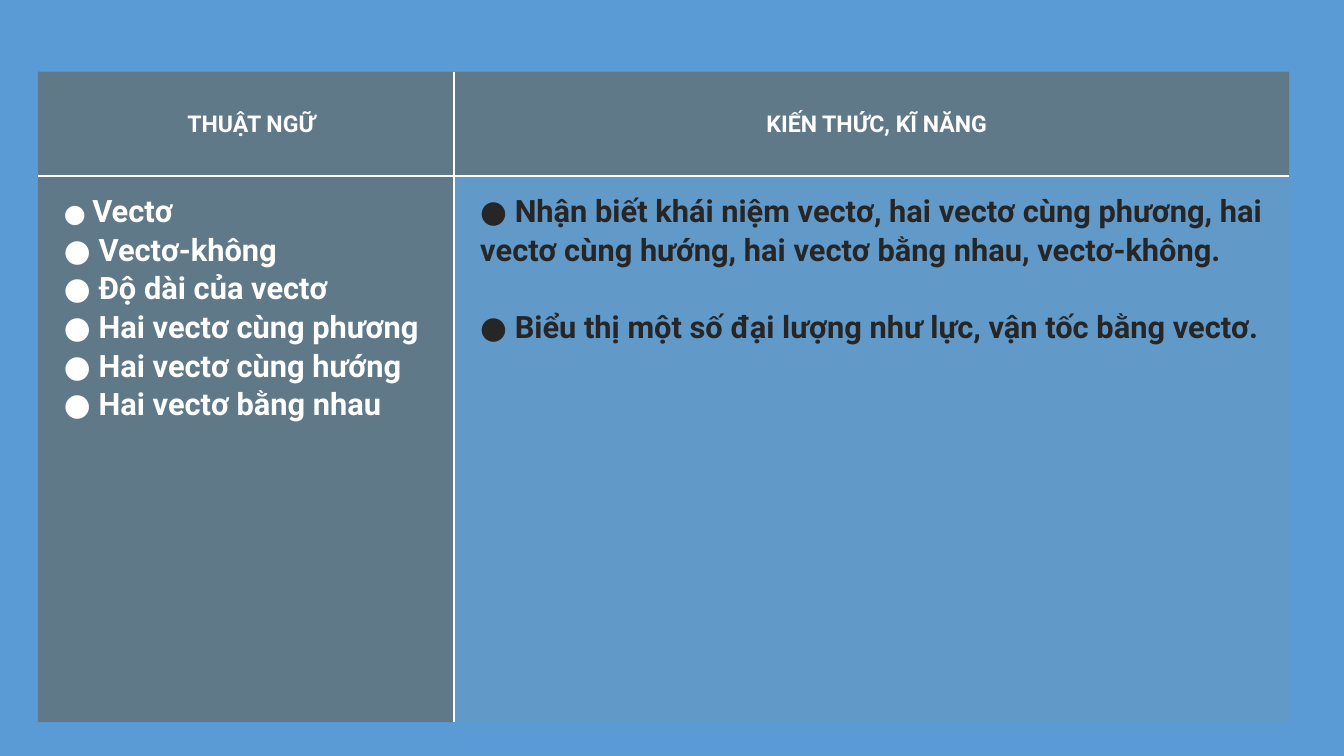
from dataclasses import dataclass

from lxml.etree import SubElement
from pptx import Presentation
from pptx.dml.color import RGBColor
from pptx.enum.text import MSO_ANCHOR, PP_ALIGN
from pptx.oxml.ns import qn
from pptx.table import _Cell
from pptx.util import Inches, Pt

WHITE, DARK, SLATE, MIST, BLUE = "FFFFFF", "262626", "636B68", "878E8B", "5B9BD5"
COLS = (8.26, 16.57)
ROWS = (2.07, 10.84)


@dataclass
class Box:
    lines: list[str]
    fill: str = SLATE
    alpha: int = 70
    color: str = WHITE
    head: bool = False
    gap: int = 0


GRID = [
    [Box(["THUẬT NGỮ"], head=True), Box(["KIẾN THỨC, KĨ NĂNG"], head=True)],
    [
        Box(["● Vectơ", "● Vectơ-không", "● Độ dài của vectơ",
             "● Hai vectơ cùng phương", "● Hai vectơ cùng hướng",
             "● Hai vectơ bằng nhau"]),
        Box(["● Nhận biết khái niệm vectơ, hai vectơ cùng phương, hai vectơ "
             "cùng hướng, hai vectơ bằng nhau, vectơ-không.",
             "● Biểu thị một số đại lượng như lực, vận tốc bằng vectơ."],
            MIST, 15, DARK, gap=55),
    ],
]


def rgb(color: str) -> RGBColor:
    return RGBColor.from_string(color)


def set_edges(cell: _Cell, inner: str) -> None:
    """Rule the inner sides (letters of LRTB) in white and clear the others."""
    props = cell._tc.get_or_add_tcPr()
    for side in "LRTB":
        line = SubElement(props, qn(f"a:ln{side}"), w=str(Pt(3)))
        if side in inner:
            fill = SubElement(line, qn("a:solidFill"))
            SubElement(fill, qn("a:srgbClr"), val=WHITE)
        else:
            SubElement(line, qn("a:noFill"))


def set_fill(cell: _Cell, color: str, alpha: int) -> None:
    cell.fill.solid()
    cell.fill.fore_color.rgb = rgb(color)
    tint = cell._tc.tcPr.find(qn("a:solidFill"))[0]
    SubElement(tint, qn("a:alpha"), val=str(alpha * 1000))


def write(cell: _Cell, box: Box) -> None:
    cell.margin_left = Inches(0.52)
    cell.margin_right = cell.margin_top = cell.margin_bottom = Inches(0.31)
    cell.vertical_anchor = MSO_ANCHOR.MIDDLE if box.head else MSO_ANCHOR.TOP
    frame = cell.text_frame
    for i, line in enumerate(box.lines):
        para = frame.add_paragraph() if i else frame.paragraphs[0]
        para.alignment = PP_ALIGN.CENTER if box.head else PP_ALIGN.LEFT
        para.line_spacing = 1.07
        if i:
            para.space_before = Pt(box.gap)
        para.add_run().text = line
        font = para.font
        font.name, font.bold = "Roboto", True
        font.size = Pt(33 if box.head else 44)
        font.color.rgb = rgb(box.color)


def shrink_dot(cell: _Cell, size: int) -> None:
    """Give the dot of the first line a run of its own in a smaller size."""
    para = cell.text_frame.paragraphs[0]
    dot = para.runs[0]
    rest = dot.text[2:]
    dot.text = dot.text[:2]
    dot.font.size = Pt(size)
    para.add_run().text = rest


def main() -> None:
    deck = Presentation()
    deck.slide_width, deck.slide_height = Inches(26.67), Inches(15)
    slide = deck.slides.add_slide(deck.slide_layouts[6])
    back = slide.background.fill
    back.solid()
    back.fore_color.rgb = rgb(BLUE)

    table = slide.shapes.add_table(
        len(ROWS), len(COLS), Inches(0.75), Inches(1.42),
        Inches(sum(COLS)), Inches(sum(ROWS))).table
    table.first_row = table.horz_banding = False
    for col, width in zip(table.columns, COLS):
        col.width = Inches(width)
    for row, height in zip(table.rows, ROWS):
        row.height = Inches(height)

    for r, boxes in enumerate(GRID):
        for c, box in enumerate(boxes):
            cell = table.cell(r, c)
            set_edges(cell, "RL"[c] + "BT"[r])
            set_fill(cell, box.fill, box.alpha)
            write(cell, box)
    shrink_dot(table.cell(1, 0), 36)
    deck.save("out.pptx")


if __name__ == "__main__":
    main()
